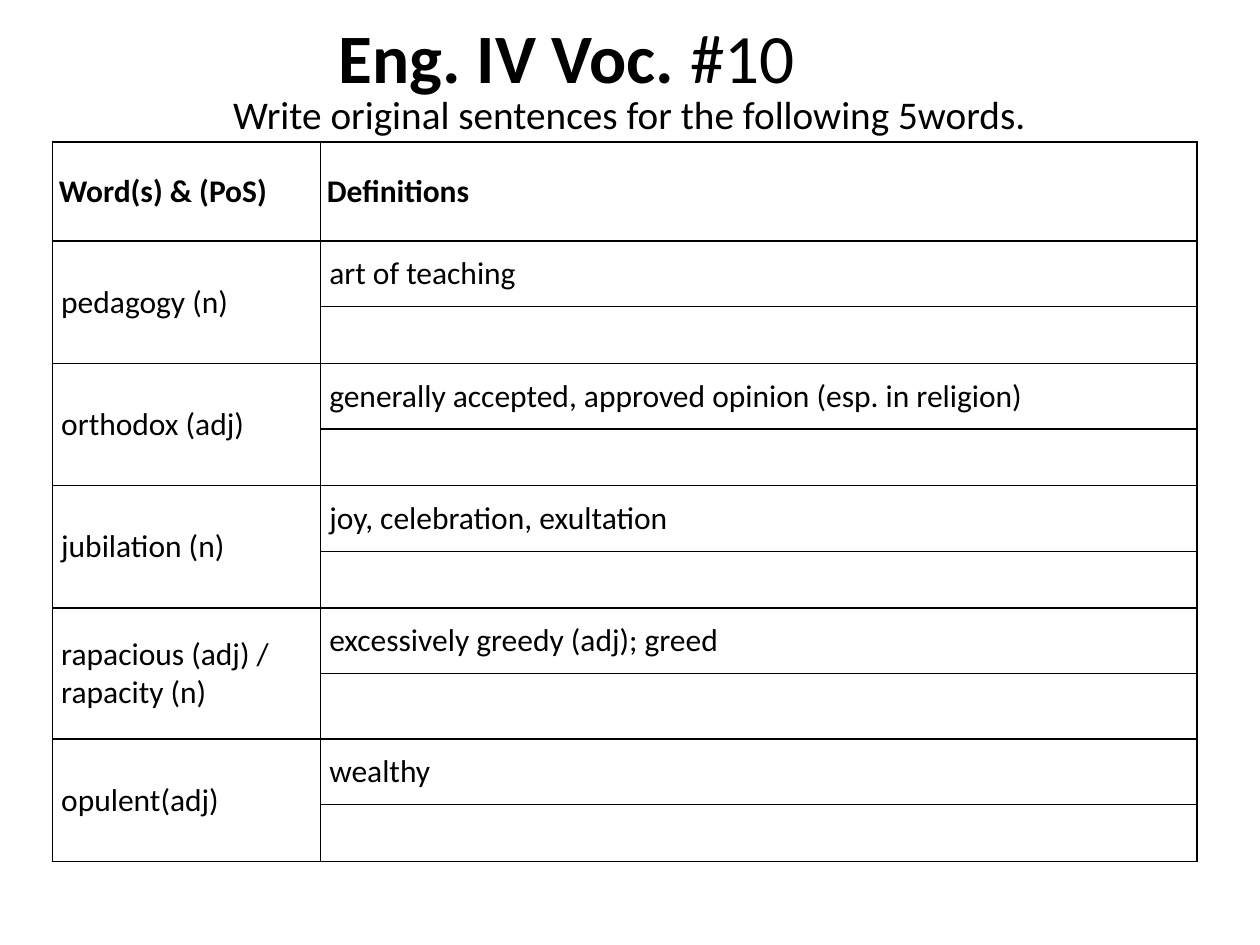
import pptx
import pptx.util
import pptx.dml.color
import pptx.enum.text
import pptx.oxml
import pptx.oxml.ns

Pt = pptx.util.Pt
ALIGN = pptx.enum.text.PP_ALIGN
ANCHOR = pptx.enum.text.MSO_ANCHOR
BLACK = "000000"
WORDS = [
    ("pedagogy (n)", "art of teaching", 32.4),
    ("orthodox (adj)", "generally accepted, approved opinion (esp. in religion)", 32.4),
    ("jubilation (n)", "joy, celebration, exultation", 32.4),
    ("rapacious (adj) /\nrapacity (n)", "excessively greedy (adj); greed", 37.5),
    ("opulent(adj)", "wealthy", 32.4),
]


def color(hex):
    """Turn a hex string into a colour."""
    return pptx.dml.color.RGBColor.from_string(hex)


def write(frame, *runs, size=18, align=ALIGN.LEFT, anchor=ANCHOR.MIDDLE):
    """Fill a text frame with (text, bold) runs; a newline starts a paragraph."""
    frame.word_wrap = True
    frame.vertical_anchor = anchor
    para = frame.paragraphs[0]
    para.alignment = align
    for text, bold in runs:
        for num, line in enumerate(text.split("\n")):
            if num:
                para = frame.add_paragraph()
                para.alignment = align
            run = para.add_run()
            run.text = line
            font = run.font
            font.name, font.size, font.bold = "Calibri", Pt(size), bold
            font.color.rgb = color(BLACK)


def border(cell, hex=BLACK, width=1):
    """Draw a solid line on all four sides of a cell."""
    props = cell._tc.get_or_add_tcPr()
    for side in ("lnL", "lnR", "lnT", "lnB"):
        props.append(pptx.oxml.parse_xml(
            f'<a:{side} {pptx.oxml.ns.nsdecls("a")} w="{Pt(width)}">'
            f'<a:solidFill><a:srgbClr val="{hex}"/></a:solidFill></a:{side}>'))


def fill_cell(cell, text, inset=5, bold=False):
    """Write one table cell."""
    cell.margin_left = cell.margin_right = Pt(inset)
    write(cell.text_frame, (text, bold))
    cell.vertical_anchor = ANCHOR.MIDDLE


def add_title(slide, left, top, width, height):
    """Place the title in its box."""
    title = slide.shapes.title
    title.left, title.top = Pt(left), Pt(top)
    title.width, title.height = Pt(width), Pt(height)
    write(title.text_frame, ("Eng. IV Voc. ", True), ("#10", False),
          size=39.6, align=ALIGN.CENTER)


def add_task(slide, left, top, width, height):
    """Place the task line in its box."""
    box = slide.shapes.add_textbox(Pt(left), Pt(top), Pt(width), Pt(height))
    write(box.text_frame, ("Write original sentences for the following 5words.", False),
          size=22.4, align=ALIGN.CENTER, anchor=ANCHOR.TOP)


def add_words(slide, left, top, width, height):
    """Place the word table, with a blank row under each definition."""
    rows = [56.6] + [size for word in WORDS for size in (37.5, word[2])]
    table = slide.shapes.add_table(
        len(rows), 2, Pt(left), Pt(top), Pt(width), Pt(height)).table
    table.first_row = table.horz_banding = False
    first = 153.2
    table.columns[0].width = Pt(first)
    table.columns[1].width = Pt(width - first)
    for row, size in zip(table.rows, rows):
        row.height = Pt(size)
    for cell in table.iter_cells():
        border(cell)
        cell.fill.background()
        cell.margin_top = cell.margin_bottom = 0
    for col, text in enumerate(("Word(s) & (PoS)", "Definitions")):
        fill_cell(table.cell(0, col), text, inset=3.6, bold=True)
    for num, (word, mean, _) in enumerate(WORDS):
        row = 1 + 2 * num
        table.cell(row, 0).merge(table.cell(row + 1, 0))
        fill_cell(table.cell(row, 0), word)
        fill_cell(table.cell(row, 1), mean)


def main():
    """Build the slide and save it."""
    deck = pptx.Presentation()
    deck.slide_width, deck.slide_height = Pt(720), Pt(540)
    slide = deck.slides.add_slide(deck.slide_layouts.get_by_name("Title Only"))
    add_title(slide, 36, 21.6, 576, 20)
    add_task(slide, 36, 48.2, 648, 30.2)
    add_words(slide, 30, 81.2, 654, 411.2)
    deck.save("out.pptx")


if __name__ == "__main__":
    main()
